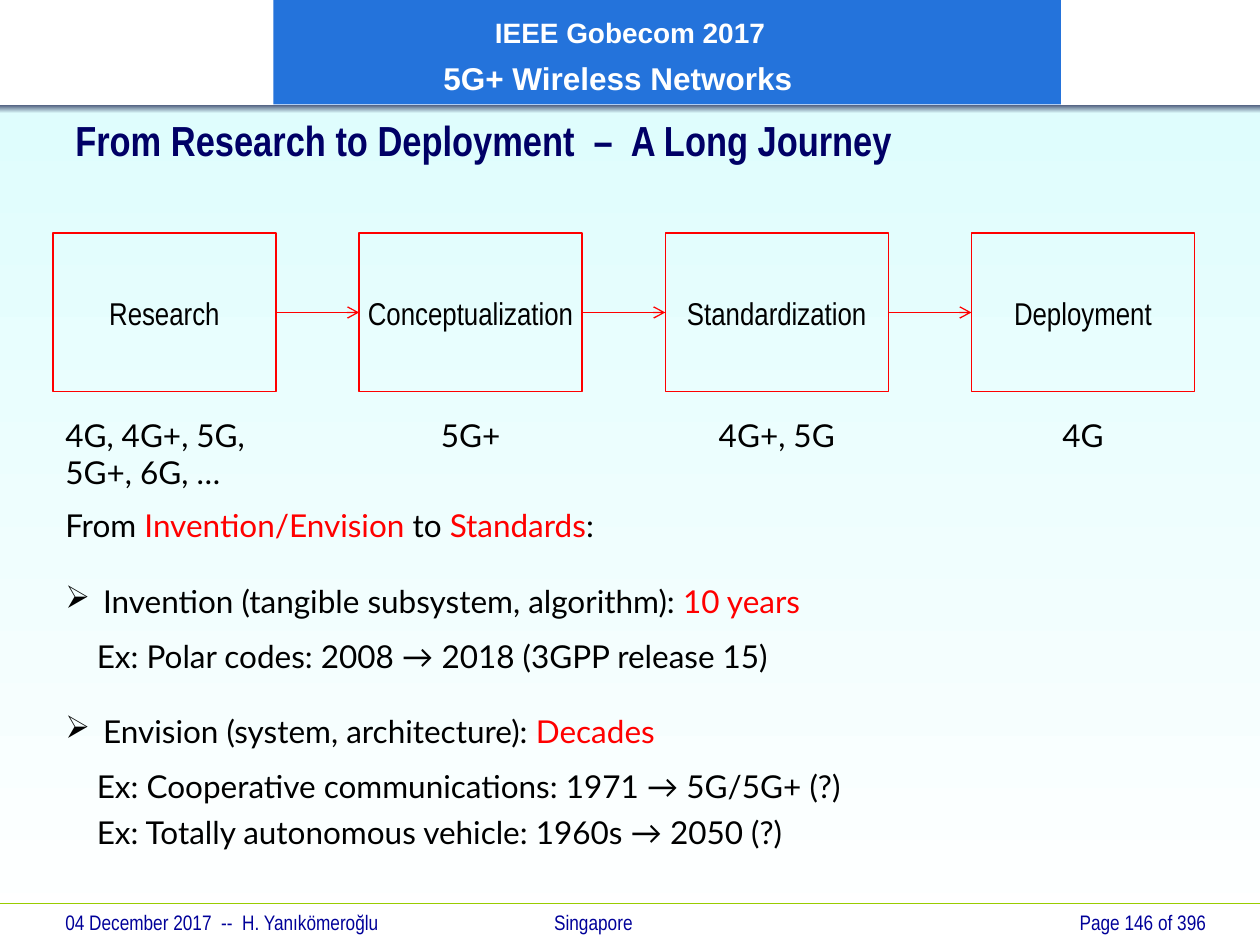
from dataclasses import dataclass
from itertools import pairwise

from lxml import etree
from pptx import Presentation
from pptx.dml.color import RGBColor
from pptx.enum.shapes import MSO_CONNECTOR, MSO_SHAPE
from pptx.enum.text import MSO_ANCHOR, PP_ALIGN
from pptx.oxml.ns import qn
from pptx.util import Inches, Pt

RECTANGLE = MSO_SHAPE.RECTANGLE
STRAIGHT = MSO_CONNECTOR.STRAIGHT
LEFT, CENTER, RIGHT = PP_ALIGN.LEFT, PP_ALIGN.CENTER, PP_ALIGN.RIGHT
TOP, MIDDLE = MSO_ANCHOR.TOP, MSO_ANCHOR.MIDDLE

BLACK = RGBColor(0x00, 0x00, 0x00)
WHITE = RGBColor(0xFF, 0xFF, 0xFF)
RED = RGBColor(0xFF, 0x00, 0x00)
GREEN = RGBColor(0x99, 0xCC, 0x00)
NAVY = RGBColor(0x00, 0x00, 0x66)
FOOTER_BLUE = RGBColor(0x00, 0x00, 0x99)
BANNER_BLUE = RGBColor(0x24, 0x73, 0xDB)
PALE_CYAN = RGBColor(0xDF, 0xFD, 0xFD)
SLATE = RGBColor(0x47, 0x55, 0x77)

NARROW, BODY, HEADING = "Arial Narrow", "Lato", "Arial"
STAGE_LEFT, STAGE_PITCH = 0.42, 2.43
STAGE_TOP, STAGE_WIDTH, STAGE_HEIGHT = 1.85, 1.77, 1.26


@dataclass(frozen=True)
class Style:
    font: str
    size: float
    color: RGBColor
    bold: bool = False


@dataclass(frozen=True)
class Stage:
    name: str
    generations: str
    align: PP_ALIGN = CENTER


@dataclass(frozen=True)
class BodyLine:
    spans: tuple[str, ...]  # every second span is highlighted
    space_before: float = 0
    margin: float = 0
    bullet: bool = False


LABEL = Style(NARROW, 18, BLACK)
TEXT = Style(BODY, 18, BLACK)
FOOTER = Style(NARROW, 12, FOOTER_BLUE)
TITLE = Style(NARROW, 24, NAVY, True)

STAGES = (
    Stage("Research", "4G, 4G+, 5G,\n5G+, 6G, …", LEFT),
    Stage("Conceptualization", "5G+"),
    Stage("Standardization", "4G+, 5G"),
    Stage("Deployment", "4G"),
)
BODY_LINES = (
    BodyLine(("From ", "Invention/Envision", " to ", "Standards", ":")),
    BodyLine(("Invention (tangible subsystem, algorithm): ", "10 years"), 21.6, 0.3, True),
    BodyLine(("Ex: Polar codes: 2008 → 2018 (3GPP release 15)",), 9.6, 0.25),
    BodyLine(("Envision (system, architecture): ", "Decades"), 21.6, 0.3, True),
    BodyLine(("Ex: Cooperative communications: 1971 → 5G/5G+ (?)",), 9.6, 0.25),
    BodyLine(("Ex: Totally autonomous vehicle: 1960s → 2050 (?)",), 4.8, 0.25),
)


def format_font(font, style: Style) -> None:
    font.name, font.size, font.bold = style.font, Pt(style.size), style.bold
    font.color.rgb = style.color


def set_margin(paragraph, margin: float, hanging: bool = False) -> None:
    properties = paragraph._p.get_or_add_pPr()
    properties.set("marL", str(Inches(margin)))
    properties.set("indent", str(Inches(-margin if hanging else 0)))


def add_text(page, left: float, top: float, width: float, height: float, text: str,
             style: Style, align: PP_ALIGN = LEFT, anchor: MSO_ANCHOR = TOP):
    box = page.shapes.add_textbox(Inches(left), Inches(top), Inches(width), Inches(height))
    frame = box.text_frame
    frame.word_wrap, frame.vertical_anchor = True, anchor
    frame.text = text
    for paragraph in frame.paragraphs:
        paragraph.alignment = align
        for span in paragraph.runs:
            format_font(span.font, style)
    return box


def add_rectangle(page, left: float, top: float, width: float, height: float):
    box = page.shapes.add_shape(RECTANGLE, Inches(left), Inches(top), Inches(width), Inches(height))
    box.shadow.inherit = False
    box.line.fill.background()
    return box


def add_gradient(page, top: float, height: float, start: RGBColor, end: RGBColor) -> None:
    band = add_rectangle(page, 0, top, 10, height)
    band.fill.gradient()
    band.fill.gradient_angle = 270
    for stop, color in zip(band.fill.gradient_stops, (start, end)):
        stop.color.rgb = color


def add_line(page, color: RGBColor, top: float = 0):
    line = page.shapes.add_connector(STRAIGHT, 0, Inches(top), Inches(10), Inches(top))
    line.line.color.rgb, line.line.width = color, Pt(0.75)
    etree.SubElement(line._element.spPr, qn("a:effectLst"))
    return line


def add_stage(page, left: float, stage: Stage):
    box = add_rectangle(page, left, STAGE_TOP, STAGE_WIDTH, STAGE_HEIGHT)
    box.fill.background()
    box.line.color.rgb, box.line.width = RED, Pt(0.75)
    frame = box.text_frame
    frame.word_wrap, frame.vertical_anchor = False, MIDDLE
    frame.text = stage.name
    frame.paragraphs[0].alignment = CENTER
    format_font(frame.paragraphs[0].runs[0].font, LABEL)
    add_text(page, left, 3.25, STAGE_WIDTH, 0.7, stage.generations, TEXT, stage.align)
    return box


def add_arrow(page, source, target) -> None:
    arrow = add_line(page, RED)
    arrow.begin_connect(source, 3)
    arrow.end_connect(target, 1)
    etree.SubElement(arrow.line._get_or_add_ln(), qn("a:tailEnd"), type="arrow")


def add_banner(page) -> None:
    banner = add_rectangle(page, 2.17, 0, 6.25, 0.83)
    banner.fill.solid()
    banner.fill.fore_color.rgb = BANNER_BLUE
    frame = banner.text_frame
    frame.margin_top, frame.margin_bottom = Inches(0.08), Inches(0.04)
    frame.vertical_anchor = MIDDLE
    frame.text = "IEEE Gobecom 2017\n5G+ Wireless Networks"
    for paragraph, size, margin in zip(frame.paragraphs, (16, 18), (1.66, 1.25)):
        paragraph.alignment, paragraph.line_spacing = LEFT, 1.1
        set_margin(paragraph, margin)
        format_font(paragraph.runs[0].font, Style(HEADING, size, WHITE, True))
    frame.paragraphs[1].space_before = Pt(3.6)


def add_body(page) -> None:
    box = add_text(page, 0.42, 3.97, 9.29, 2.86, "", TEXT)
    frame = box.text_frame
    for index, line in enumerate(BODY_LINES):
        paragraph = frame.add_paragraph() if index else frame.paragraphs[0]
        if index:
            paragraph.space_before = Pt(line.space_before)
        set_margin(paragraph, line.margin, line.bullet)
        if line.bullet:
            etree.SubElement(paragraph._p.get_or_add_pPr(), qn("a:buChar"), char="➢")
        for position, text in enumerate(line.spans):
            span = paragraph.add_run()
            span.text = text
            format_font(span.font, Style(BODY, 18, RED if position % 2 else BLACK))


def main() -> None:
    deck = Presentation()
    deck.slide_width, deck.slide_height = Inches(10), Inches(7.5)
    page = deck.slides.add_slide(deck.slide_layouts[6])

    # Background and banner
    add_gradient(page, 0.86, 6.64, PALE_CYAN, WHITE)
    add_gradient(page, 0.83, 0.07, SLATE, PALE_CYAN)
    add_banner(page)

    # Footer
    add_line(page, GREEN, 7.17)
    add_text(page, 0.42, 7.17, 3.5, 0.33, "04 December 2017  --  H. Yanıkömeroğlu", FOOTER)
    add_text(page, 4.3, 7.17, 1.5, 0.33, "Singapore", FOOTER)
    add_text(page, 7.5, 7.17, 2.17, 0.33, "Page 146 of 396", FOOTER, RIGHT)

    # Title
    add_text(page, 0.5, 0.9, 9, 0.42, "From Research to Deployment  –  A Long Journey",
             TITLE, anchor=MIDDLE)

    # Stages from research to deployment
    boxes = [add_stage(page, STAGE_LEFT + index * STAGE_PITCH, stage)
             for index, stage in enumerate(STAGES)]
    for source, target in pairwise(boxes):
        add_arrow(page, source, target)

    # Time from idea to standard
    add_body(page)

    deck.save("out.pptx")


if __name__ == "__main__":
    main()
